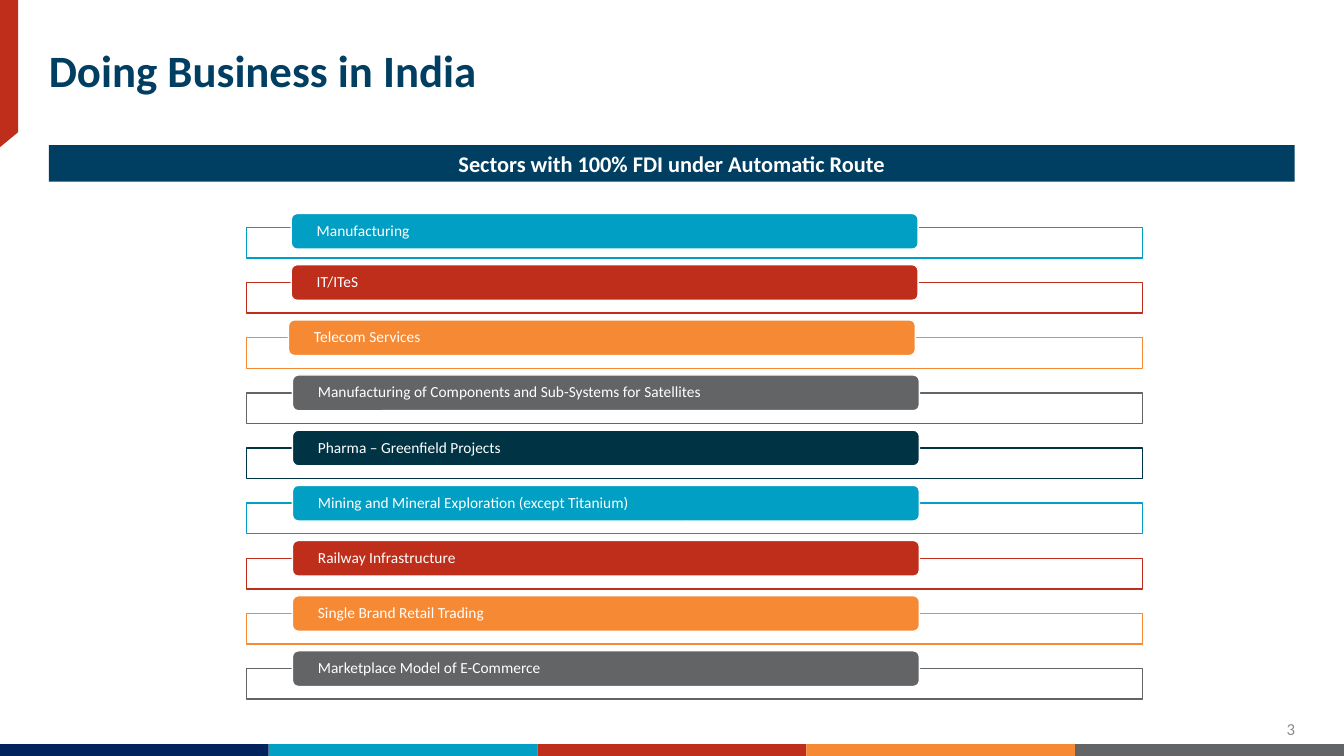
from pptx import Presentation
from pptx.dml.color import RGBColor
from pptx.enum import shapes, text
from pptx.util import Cm, Pt

NAVY = RGBColor(0x00, 0x3F, 0x62)
MIDNIGHT = RGBColor(0x00, 0x23, 0x5D)
TEAL = RGBColor(0x00, 0x34, 0x45)
BLUE = RGBColor(0x00, 0x9F, 0xC3)
RED = RGBColor(0xBF, 0x2E, 0x1A)
ORANGE = RGBColor(0xF6, 0x89, 0x33)
GRAY = RGBColor(0x63, 0x64, 0x66)
PALE_GRAY = RGBColor(0x8C, 0x8C, 0x8C)
WHITE = RGBColor(0xFF, 0xFF, 0xFF)

LEFT, CENTER, RIGHT = text.PP_ALIGN.LEFT, text.PP_ALIGN.CENTER, text.PP_ALIGN.RIGHT
TOP, MIDDLE, BOTTOM = text.MSO_ANCHOR.TOP, text.MSO_ANCHOR.MIDDLE, text.MSO_ANCHOR.BOTTOM
RECTANGLE = shapes.MSO_SHAPE.RECTANGLE
ROUNDED = shapes.MSO_SHAPE.ROUNDED_RECTANGLE

deck = Presentation()
deck.slide_width, deck.slide_height = Cm(33.87), Cm(19.05)
page = deck.slides.add_slide(deck.slide_layouts[6])


def add_block(kind, left, top, width, height, fill, line=None):
    block = page.shapes.add_shape(kind, Cm(left), Cm(top), Cm(width), Cm(height))
    block.shadow.inherit = False
    block.fill.solid()
    block.fill.fore_color.rgb = fill
    if line is None:
        block.line.fill.background()
    else:
        block.line.color.rgb = line
        block.line.width = Pt(1)
    return block


def write(box, words, size, color, align=LEFT, anchor=MIDDLE, bold=False, inset=0, spacing=1.0):
    """Put one formatted line in a box; inset is the side margin in cm."""
    frame = box.text_frame
    settings = {"word_wrap": True, "vertical_anchor": anchor,
                "margin_left": Cm(inset), "margin_right": Cm(inset),
                "margin_top": 0, "margin_bottom": 0}
    for name, value in settings.items():
        setattr(frame, name, value)
    para = frame.paragraphs[0]
    para.alignment = align
    para.line_spacing = spacing
    span = para.add_run()
    span.text = words
    for name, value in {"name": "Calibri", "size": Pt(size), "bold": bold}.items():
        setattr(span.font, name, value)
    span.font.color.rgb = color


# Red corner tab
outline = page.shapes.build_freeform(0, 0)
outline.add_line_segments([(0, Cm(3.71)), (Cm(0.46), Cm(3.33)), (Cm(0.46), 0)], close=True)
tab = outline.convert_to_shape()
tab.shadow.inherit = False
tab.fill.solid()
tab.fill.fore_color.rgb = RED
tab.line.fill.background()

# Footer stripe
stripe_width = 33.87 / 5
for index, color in enumerate([MIDNIGHT, BLUE, RED, ORANGE, GRAY]):
    add_block(RECTANGLE, index * stripe_width, 18.75, stripe_width, 0.3, color)

# Page number, title and banner
number = page.shapes.add_textbox(Cm(30.91), Cm(18.11), Cm(1.73), Cm(0.51))
write(number, "3", 12, PALE_GRAY, RIGHT, BOTTOM)
title = page.shapes.add_textbox(Cm(1.23), Cm(1.24), Cm(26.72), Cm(1.22))
write(title, "Doing Business in India", 32, NAVY, anchor=TOP, bold=True, spacing=0.9)
banner = add_block(RECTANGLE, 1.23, 3.66, 31.4, 0.92, NAVY)
write(banner, "Sectors with 100% FDI under Automatic Route", 16, WHITE, CENTER, bold=True)

# Sector list: outlined frame with a label pill over its upper edge
PILL_LEFT, PILL_RISE = 7.37, 0.45
sectors = [
    ("Manufacturing", BLUE, 7.34, 0.35),
    ("IT/ITeS", RED, 7.34, PILL_RISE),
    ("Telecom Services", ORANGE, 7.27, PILL_RISE),
    ("Manufacturing of Components and Sub-Systems for Satellites", GRAY, PILL_LEFT, PILL_RISE),
    ("Pharma – Greenfield Projects", TEAL, PILL_LEFT, PILL_RISE),
    ("Mining and Mineral Exploration (except Titanium)", BLUE, PILL_LEFT, PILL_RISE),
    ("Railway Infrastructure", RED, PILL_LEFT, PILL_RISE),
    ("Single Brand Retail Trading", ORANGE, PILL_LEFT, PILL_RISE),
    ("Marketplace Model of E-Commerce", GRAY, PILL_LEFT, PILL_RISE),
]
for row, (label, color, pill_left, rise) in enumerate(sectors):
    top = 5.73 + row * 1.39
    add_block(RECTANGLE, 6.22, top, 22.58, 0.77, WHITE, color)
    pill = add_block(ROUNDED, pill_left, top - rise, 15.8, 0.9, color, WHITE)
    write(pill, label, 11, WHITE, inset=0.6, spacing=0.9)

deck.save("out.pptx")
